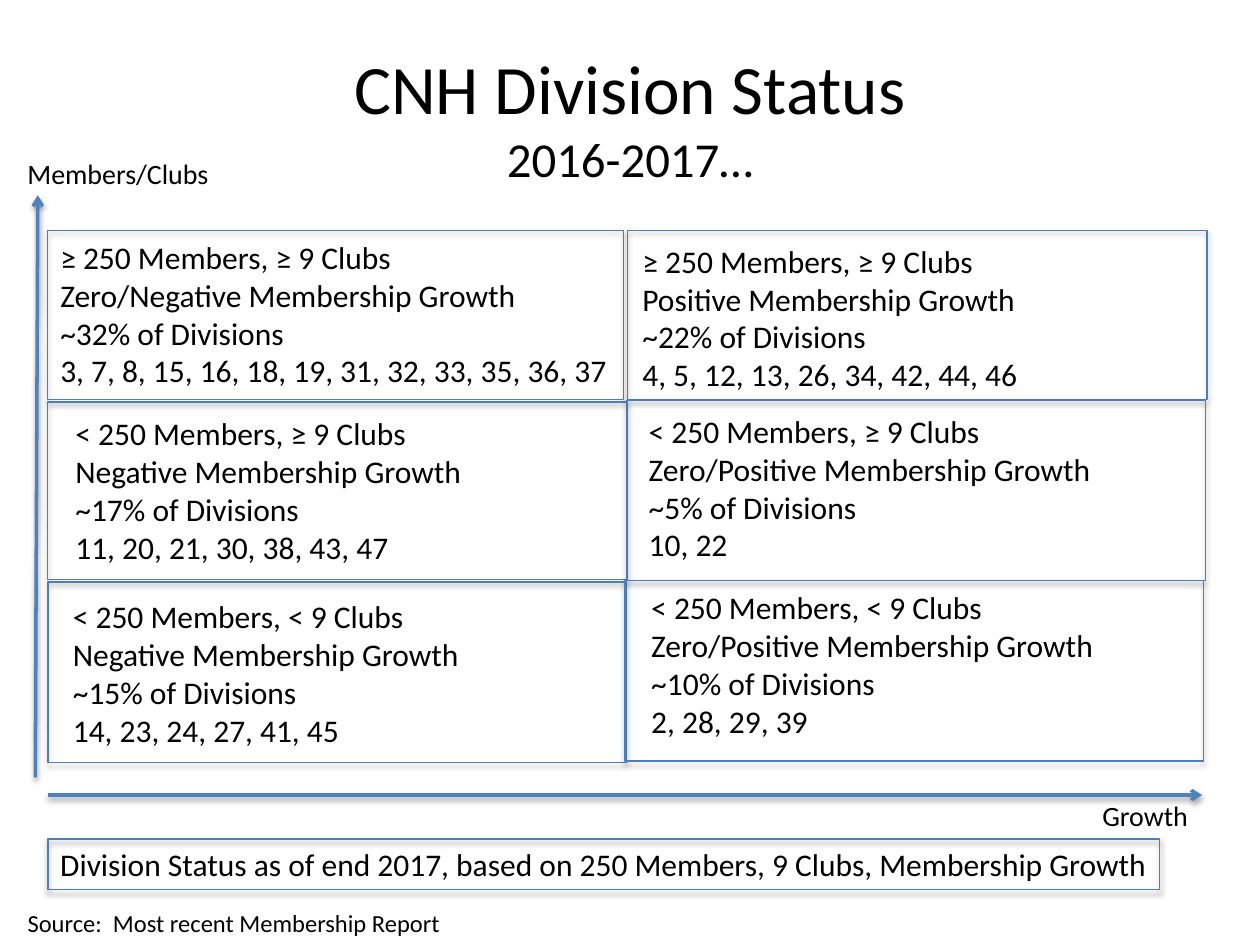
from lxml import etree
from pptx import Presentation
from pptx.dml.color import RGBColor
from pptx.enum.shapes import MSO_CONNECTOR, MSO_SHAPE
from pptx.enum.text import MSO_ANCHOR, PP_ALIGN
from pptx.oxml.ns import qn
from pptx.util import Pt

PX = 9144  # 100 px to the inch
RECTANGLE = MSO_SHAPE.RECTANGLE
STRAIGHT = MSO_CONNECTOR.STRAIGHT
MIDDLE, CENTER = MSO_ANCHOR.MIDDLE, PP_ALIGN.CENTER
FONT = "Calibri"
COLORS = {"text": "000000", "border": "4B7EBC", "axis": "4F81BD", "shadow": "000000"}

prs = Presentation()
prs.slide_width, prs.slide_height = 1000 * PX, 750 * PX
slide = prs.slides.add_slide(prs.slide_layouts[6])


def add_text(box, lines, sizes):
    """Add a text box with one paragraph for each line."""
    frame = slide.shapes.add_textbox(*(v * PX for v in box)).text_frame
    frame.word_wrap = True
    frame.text = "\n".join(lines)
    for paragraph, size in zip(frame.paragraphs, sizes):
        paragraph.font.name = FONT
        paragraph.font.size = Pt(size)
        paragraph.font.color.rgb = RGBColor.from_string(COLORS["text"])
    return frame


def style_line(item, color, width, opacity):
    """Set the line and a soft shadow that falls straight down."""
    item.line.color.rgb = RGBColor.from_string(COLORS[color])
    item.line.width = Pt(width)
    properties = item._element.spPr
    for old in properties.findall(qn("a:effectLst")):
        properties.remove(old)
    effects = etree.SubElement(properties, qn("a:effectLst"))
    shadow = etree.SubElement(effects, qn("a:outerShdw"), blurRad=str(Pt(3.1)),
                              dist=str(Pt(1.8)), dir="5400000", rotWithShape="0")
    tint = etree.SubElement(shadow, qn("a:srgbClr"), val=COLORS["shadow"])
    etree.SubElement(tint, qn("a:alpha"), val=str(opacity * 1000))


# Title
title = add_text((50, 30, 900, 125), ["CNH Division Status", "2016-2017…"], [39.6, 27.9])
title.vertical_anchor = MIDDLE
for paragraph in title.paragraphs:
    paragraph.alignment = CENTER

# Frames: six quadrants of the grid and the summary
frames = [
    (38, 183, 457, 134), (498, 183, 460, 134),
    (38, 319, 460, 141), (497, 318, 460, 143),
    (38, 462, 459, 143), (496, 461, 459, 143),
    (38, 666, 882, 40),
]
for box in frames:
    frame = slide.shapes.add_shape(RECTANGLE, *(v * PX for v in box))
    frame.fill.background()
    style_line(frame, "border", 0.75, 35)

# Quadrant texts: box, size class, growth, share, divisions
quadrants = [
    ((38, 184, 459, 131), "≥ 250 Members, ≥ 9 Clubs", "Zero/Negative", 32,
     "3, 7, 8, 15, 16, 18, 19, 31, 32, 33, 35, 36, 37"),
    ((500, 187, 450, 131), "≥ 250 Members, ≥ 9 Clubs", "Positive", 22,
     "4, 5, 12, 13, 26, 34, 42, 44, 46"),
    ((50, 324, 330, 131), "< 250 Members, ≥ 9 Clubs", "Negative", 17,
     "11, 20, 21, 30, 38, 43, 47"),
    ((505, 322, 375, 131), "< 250 Members, ≥ 9 Clubs", "Zero/Positive", 5, "10, 22"),
    ((48, 469, 330, 131), "< 250 Members, < 9 Clubs", "Negative", 15,
     "14, 23, 24, 27, 41, 45"),
    ((507, 462, 375, 131), "< 250 Members, < 9 Clubs", "Zero/Positive", 10,
     "2, 28, 29, 39"),
]
for box, size_class, growth, share, divisions in quadrants:
    lines = [size_class, f"{growth} Membership Growth", f"~{share}% of Divisions", divisions]
    add_text(box, lines, [18] * 4)

# Axes
for ends in [(28, 617, 30, 155), (38, 631, 954, 631)]:
    axis = slide.shapes.add_connector(STRAIGHT, *(v * PX for v in ends))
    style_line(axis, "axis", 2, 38)
    etree.SubElement(axis.line._get_or_add_ln(), qn("a:tailEnd"), type="arrow")

# Axis labels, summary and source
captions = [
    ((12, 119, 170, 37), "Members/Clubs", 16),
    ((865, 629, 92, 37), "Growth", 16),
    ((38, 666, 893, 40),
     "Division Status as of end 2017, based on 250 Members, 9 Clubs, Membership Growth", 18),
    ((12, 716, 355, 34), "Source:  Most recent Membership Report", 14),
]
for box, caption, size in captions:
    add_text(box, [caption], [size])

prs.save("out.pptx")
